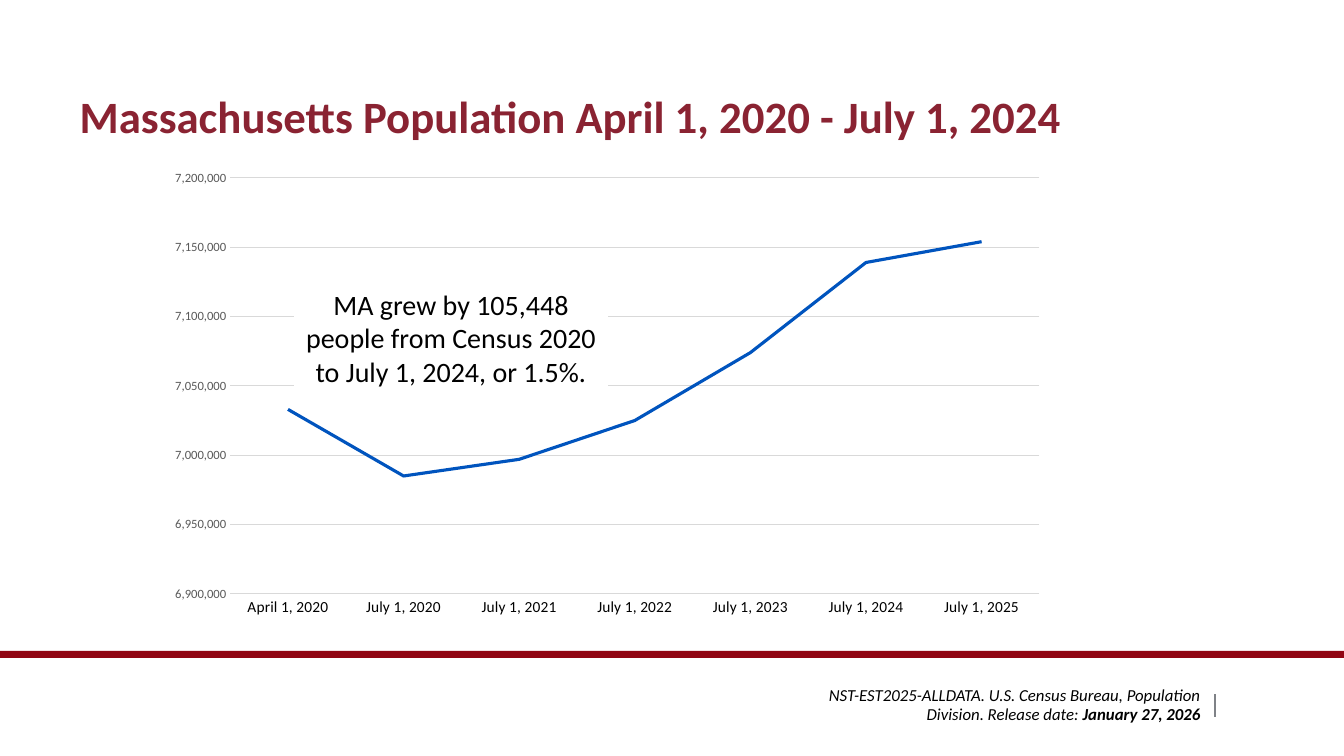
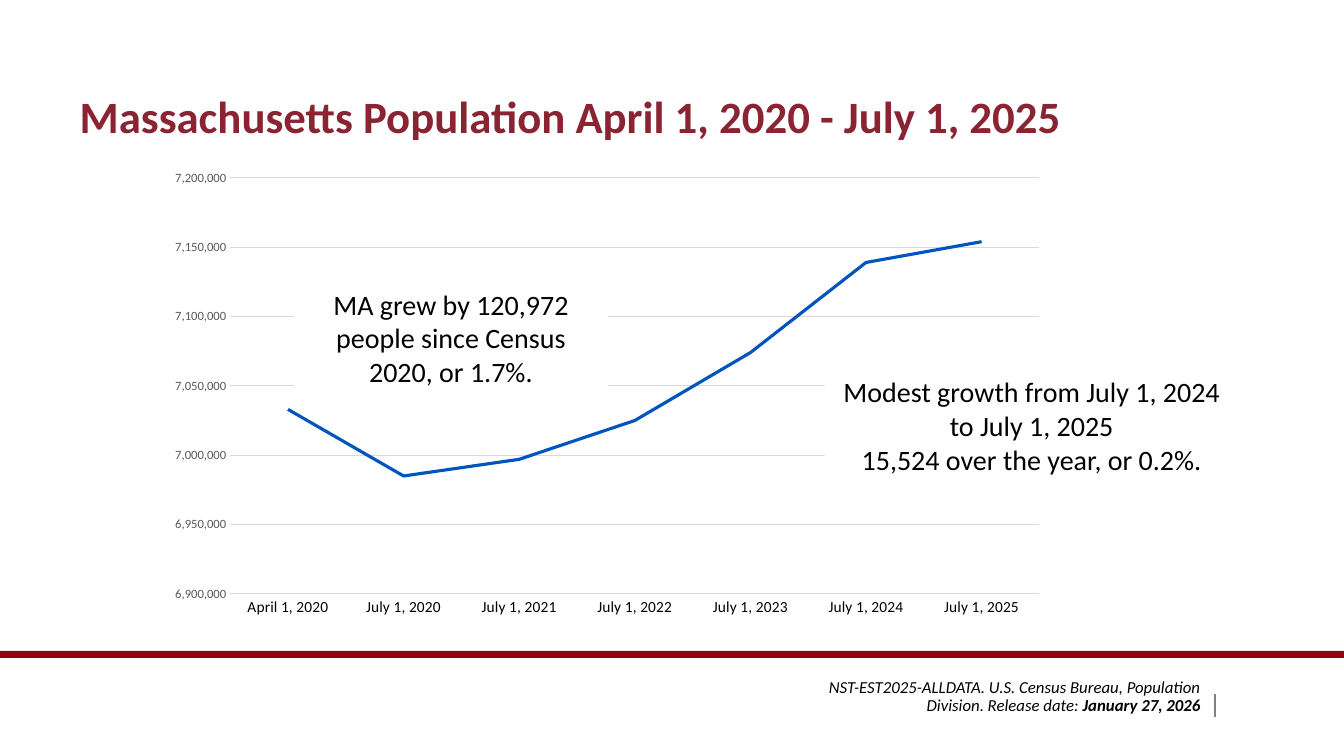
from lxml import etree
from pptx import Presentation
from pptx import util as u
from pptx.chart import data as cd
from pptx.dml.color import RGBColor
from pptx.enum import chart as ch, shapes as sh, text as tx
from pptx.oxml import ns

Pt = u.Pt
FONT = "Calibri"
WINE = RGBColor(0x8A, 0x23, 0x32)
RED = RGBColor(0x91, 0x05, 0x13)
BLUE = RGBColor(0x00, 0x54, 0xBE)
BLACK = RGBColor(0, 0, 0)
WHITE = RGBColor(255, 255, 255)
SLATE = RGBColor(0x7F, 0x82, 0x87)
GREY = RGBColor(0x59, 0x59, 0x59)
PALE = RGBColor(0xD9, 0xD9, 0xD9)

PEOPLE = {
    "April 1, 2020": 7033000,
    "July 1, 2020": 6985000,
    "July 1, 2021": 6997000,
    "July 1, 2022": 7025000,
    "July 1, 2023": 7074000,
    "July 1, 2024": 7139000,
    "July 1, 2025": 7154000,
}
SOURCE = ("NST-EST2025-ALLDATA. U.S. Census Bureau, Population Division. "
          "Release date: ")
DATE = "January 27, 2026"


class Deck:
    def __init__(self):
        self.prs = Presentation()
        self.prs.slide_width, self.prs.slide_height = Pt(960), Pt(540)
        self.slide = None

    def style(self, font, size, color=BLACK, bold=None, italic=None):
        font.name, font.size, font.color.rgb = FONT, Pt(size), color
        font.bold, font.italic = bold, italic

    def place(self, shape, left, top, width, height):
        shape.left, shape.top = Pt(left), Pt(top)
        shape.width, shape.height = Pt(width), Pt(height)
        frame = shape.text_frame
        frame.auto_size = tx.MSO_AUTO_SIZE.NONE
        frame.vertical_anchor = tx.MSO_ANCHOR.MIDDLE
        return frame.paragraphs[0]

    def rect(self, left, top, width, height, fill):
        box = self.slide.shapes.add_shape(
            sh.MSO_SHAPE.RECTANGLE, Pt(left), Pt(top), Pt(width), Pt(height))
        box.shadow.inherit = False
        box.fill.solid()
        box.fill.fore_color.rgb = fill
        box.line.fill.background()
        return box

    def page(self, title, foot):
        """Start a slide; foot is the top of its source line."""
        self.slide = self.prs.slides.add_slide(self.prs.slide_layouts[1])
        self.rect(0, 465, 960, 5, RED)
        self.tick()
        self.title(title)
        self.source(foot)

    def tick(self):
        line = self.slide.shapes.add_connector(
            sh.MSO_CONNECTOR.STRAIGHT, Pt(867.6), Pt(496), Pt(867.6), Pt(512))
        line.line.color.rgb = SLATE
        line.line.width = Pt(1.25)
        etree.SubElement(line.element.spPr, ns.qn("a:effectLst"))

    def title(self, words):
        para = self.place(self.slide.shapes.title, 49.7, 58.3, 861.8, 54)
        para.text = words
        para.alignment = tx.PP_ALIGN.LEFT
        para.line_spacing = 0.9
        self.style(para.font, 32, WINE, bold=True)

    def source(self, top):
        para = self.place(self.slide.placeholders[1], 568.8, top, 296, 16)
        props = para._p.get_or_add_pPr()
        props.set("marL", "0")
        props.set("indent", "0")
        etree.SubElement(props, ns.qn("a:buNone"))
        para.alignment = tx.PP_ALIGN.RIGHT
        para.line_spacing = 0.9
        para.space_before = Pt(0)
        self.style(para.font, 12, italic=True)
        para.add_run().text = SOURCE
        date = para.add_run()
        date.text = DATE
        date.font.bold = True

    def chart(self):
        data = cd.CategoryChartData(number_format="#,##0")
        data.categories = list(PEOPLE)
        data.add_series("Population", list(PEOPLE.values()))
        chart = self.slide.shapes.add_chart(
            ch.XL_CHART_TYPE.LINE, Pt(112.3), Pt(115.2), Pt(643), Pt(332),
            data).chart
        chart.has_title = chart.has_legend = False
        self.style(chart.font, 10)
        plot = chart.plots[0]
        plot.vary_by_categories = False
        line = plot.series[0]
        line.smooth = False
        line.marker.style = ch.XL_MARKER_STYLE.NONE
        line.format.line.color.rgb = BLUE
        line.format.line.width = Pt(2.25)

        cat, val = chart.category_axis, chart.value_axis
        for axis, size, color in ((cat, 11, BLACK), (val, 9, GREY)):
            axis.major_tick_mark = axis.minor_tick_mark = ch.XL_TICK_MARK.NONE
            self.style(axis.tick_labels.font, size, color)
        val.minimum_scale, val.maximum_scale = 6900000, 7200000
        val.major_unit = 50000
        val.tick_labels.number_format = "#,##0"
        val.tick_labels.number_format_is_linked = False
        val.format.line.fill.background()
        for part in (cat, val.major_gridlines):
            part.format.line.color.rgb = PALE
            part.format.line.width = Pt(0.75)

    def note(self, left, top, width, *lines):
        frame = self.rect(left, top, width, 80, WHITE).text_frame
        frame.word_wrap = True
        frame.vertical_anchor = tx.MSO_ANCHOR.TOP
        frame.text = "\n".join(lines)
        for para in frame.paragraphs:
            para.alignment = tx.PP_ALIGN.CENTER
            self.style(para.font, 20)


def main():
    deck = Deck()
    pages = (
        ("2024", 496,
         "MA grew by 105,448 people from Census 2020 to July 1, 2024, or 1.5%."),
        ("2025", 489.6,
         "MA grew by 120,972 people since Census 2020, or 1.7%."),
    )
    for year, foot, growth in pages:
        deck.page(f"Massachusetts Population April 1, 2020 - July 1, {year}",
                  foot)
        deck.chart()
        deck.note(210.2, 201.6, 224, growth)
    deck.note(589, 264.2, 296,
              "Modest growth from July 1, 2024 to July 1, 2025",
              "15,524 over the year, or 0.2%.")
    deck.prs.save("out.pptx")


if __name__ == "__main__":
    main()
